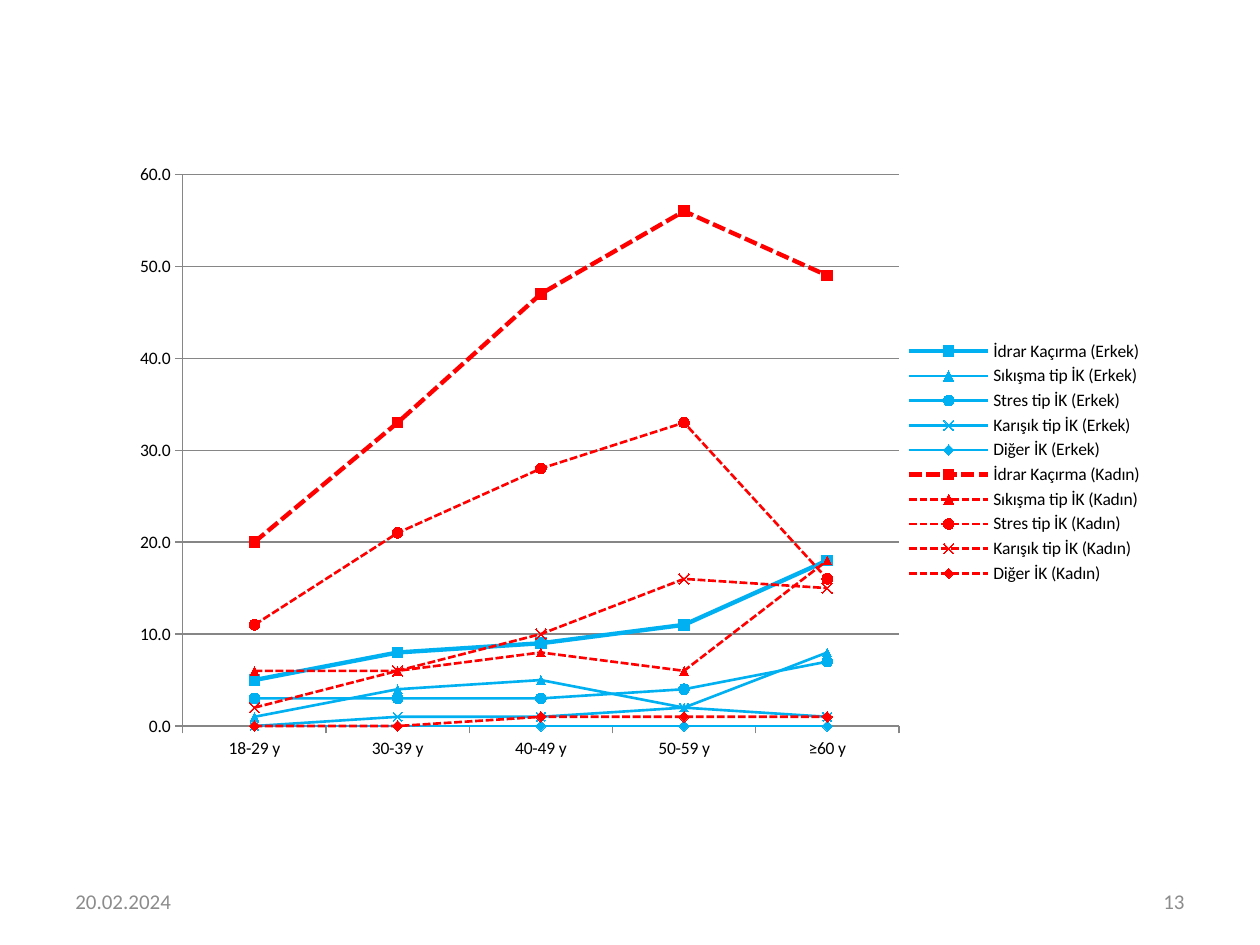
from dataclasses import dataclass

from lxml.etree import SubElement
from pptx import Presentation
from pptx.chart.data import CategoryChartData
from pptx.dml.color import RGBColor
from pptx.enum.chart import (XL_CHART_TYPE, XL_LEGEND_POSITION, XL_MARKER_STYLE,
                             XL_TICK_MARK)
from pptx.enum.dml import MSO_LINE
from pptx.enum.text import MSO_ANCHOR, PP_ALIGN
from pptx.oxml.ns import qn
from pptx.util import Cm, Pt


@dataclass(frozen=True)
class Theme:
    font: str = "Calibri"
    text: RGBColor = RGBColor(0, 0, 0)
    muted: RGBColor = RGBColor(0x8C, 0x8C, 0x8C)
    axis: RGBColor = RGBColor(0x86, 0x86, 0x86)
    male: RGBColor = RGBColor(0x00, 0xB0, 0xF0)
    female: RGBColor = RGBColor(0xFF, 0x00, 0x00)
    chart_size: Pt = Pt(10)
    footer_size: Pt = Pt(12)
    total_line: Pt = Pt(2.5)
    type_line: Pt = Pt(1.5)
    thin_line: Pt = Pt(0.75)


THEME = Theme()

AGE_GROUPS = ["18-29 y", "30-39 y", "40-49 y", "50-59 y", "≥60 y"]

# Incontinence type: marker, marker size for men and women
TYPES = {
    "İdrar Kaçırma": (XL_MARKER_STYLE.SQUARE, 6, 6),
    "Sıkışma tip İK": (XL_MARKER_STYLE.TRIANGLE, 5, 5),
    "Stres tip İK": (XL_MARKER_STYLE.CIRCLE, 6, 6),
    "Karışık tip İK": (XL_MARKER_STYLE.X, 5, 6),
    "Diğer İK": (XL_MARKER_STYLE.DIAMOND, 6, 6),
}

# Percentages by age group, one row per type
RATES = {
    "Erkek": [
        (5, 8, 9, 11, 18),
        (1, 4, 5, 2, 8),
        (3, 3, 3, 4, 7),
        (0, 1, 1, 2, 1),
        (0, 0, 0, 0, 0),
    ],
    "Kadın": [
        (20, 33, 47, 56, 49),
        (6, 6, 8, 6, 18),
        (11, 21, 28, 33, 16),
        (2, 6, 10, 16, 15),
        (0, 0, 1, 1, 1),
    ],
}


def style_series(series, color, width, dashed, marker, size):
    series.smooth = False
    line = series.format.line
    line.color.rgb = color
    line.width = width
    if dashed:
        line.dash_style = MSO_LINE.SQUARE_DOT  # written as sysDash below
        line._ln.find(qn("a:prstDash")).set("val", "sysDash")
    series.marker.style = marker
    series.marker.size = size
    marker_format = series.marker.format
    marker_format.line.color.rgb = color
    marker_format.line.width = THEME.thin_line
    if marker == XL_MARKER_STYLE.X:
        marker_format.fill.background()
    else:
        marker_format.fill.solid()
        marker_format.fill.fore_color.rgb = color


def style_axes(chart):
    rates, ages = chart.value_axis, chart.category_axis
    rates.minimum_scale, rates.maximum_scale, rates.major_unit = 0, 60, 10
    rates.has_major_gridlines = True
    rates.tick_labels.number_format = "0.0"
    rates.tick_labels.number_format_is_linked = False
    for axis in (rates, ages):
        axis.major_tick_mark = XL_TICK_MARK.OUTSIDE
        axis.minor_tick_mark = XL_TICK_MARK.NONE
    for part in (rates, ages, rates.major_gridlines):
        part.format.line.color.rgb = THEME.axis
        part.format.line.width = THEME.thin_line


def place_plot(chart, x, y, w, h):
    plot_area = chart._chartSpace.chart.plotArea
    layout = plot_area.find(qn("c:layout"))
    if layout is None:
        layout = plot_area.makeelement(qn("c:layout"))
        plot_area.insert(0, layout)
    manual = SubElement(layout, qn("c:manualLayout"))
    settings = {"layoutTarget": "inner", "xMode": "edge", "yMode": "edge",
                "x": x, "y": y, "w": w, "h": h}
    for tag, value in settings.items():
        SubElement(manual, qn(f"c:{tag}")).set("val", str(value))


def add_rate_chart(slide):
    rate_data = CategoryChartData(number_format="0.0")
    rate_data.categories = AGE_GROUPS
    for sex, rows in RATES.items():
        for kind, rates in zip(TYPES, rows):
            rate_data.add_series(f"{kind} ({sex})", rates)
    chart = slide.shapes.add_chart(
        XL_CHART_TYPE.LINE_MARKERS, Cm(2.5), Cm(3.12), Cm(20.8), Cm(12.4),
        rate_data).chart
    chart.has_title = False
    chart.font.name = THEME.font
    chart.font.size = THEME.chart_size
    chart.font.color.rgb = THEME.text
    chart.has_legend = True
    chart.legend.position = XL_LEGEND_POSITION.RIGHT
    chart.legend.include_in_layout = False
    plot = chart.plots[0]
    plot.vary_by_categories = False

    # Colour and dash tell the sex, marker and width the type
    for index, series in enumerate(plot.series):
        is_female, row = divmod(index, len(TYPES))
        marker, *sizes = list(TYPES.values())[row]
        style_series(series, THEME.female if is_female else THEME.male,
                     THEME.type_line if row else THEME.total_line,
                     is_female, marker, sizes[is_female])
    style_axes(chart)
    place_plot(chart, 0.057, 0.032, 0.694, 0.897)


def add_footer(slide, left, text, alignment):
    footer = slide.shapes.add_textbox(left, Cm(17.65), Cm(5.92), Cm(1.02))
    frame = footer.text_frame
    frame.word_wrap = True
    frame.vertical_anchor = MSO_ANCHOR.MIDDLE
    frame.text = text
    paragraph = frame.paragraphs[0]
    paragraph.alignment = alignment
    font = paragraph.runs[0].font
    font.name = THEME.font
    font.size = THEME.footer_size
    font.color.rgb = THEME.muted


def main():
    deck = Presentation()
    deck.slide_width, deck.slide_height = Cm(25.4), Cm(19.05)
    slide = deck.slides.add_slide(deck.slide_layouts[6])

    # Chart
    add_rate_chart(slide)

    # Date and page number
    add_footer(slide, Cm(1.27), "20.02.2024", PP_ALIGN.LEFT)
    add_footer(slide, Cm(18.21), "13", PP_ALIGN.RIGHT)

    deck.save("out.pptx")


if __name__ == "__main__":
    main()
